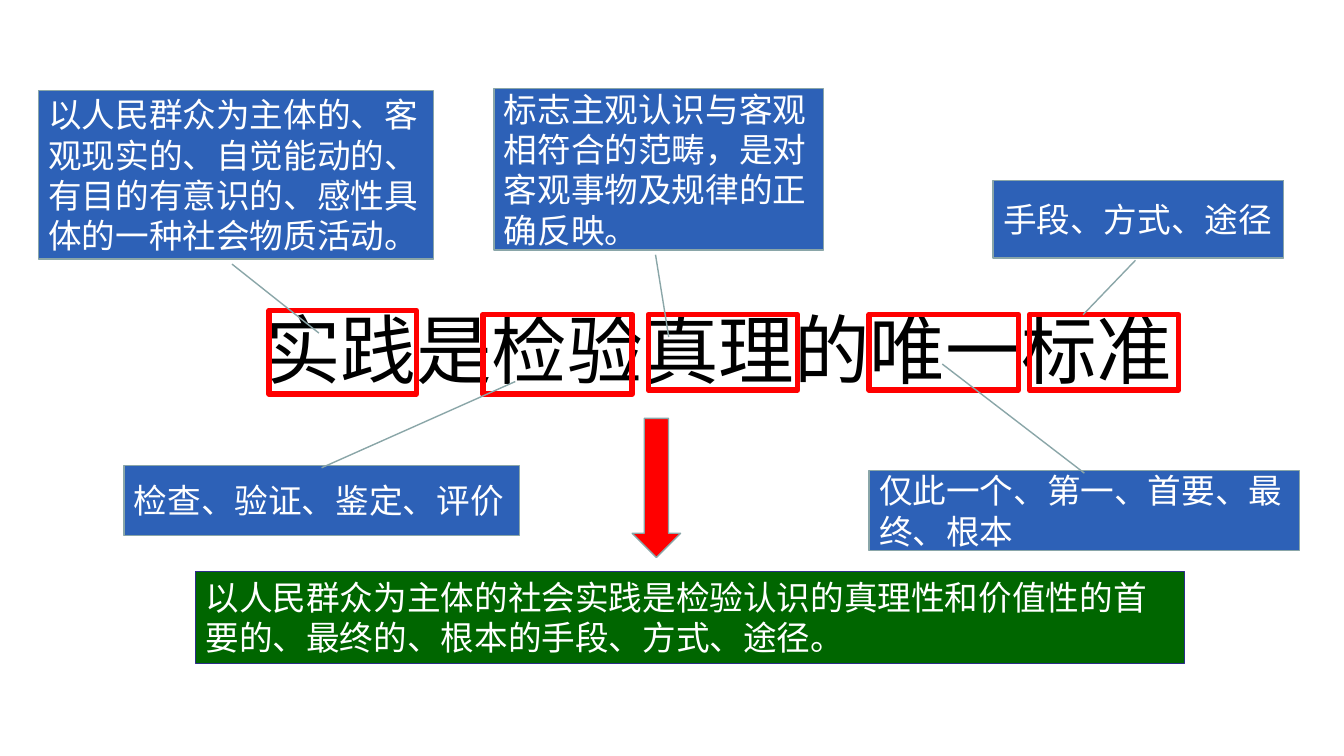
from lxml.etree import SubElement
from pptx import Presentation
from pptx.dml.color import RGBColor
from pptx.enum.shapes import MSO_SHAPE
from pptx.enum.text import MSO_ANCHOR, MSO_AUTO_SIZE, PP_ALIGN
from pptx.oxml.ns import qn
from pptx.util import Pt

# Content: lengths in px, 100 to the inch
PX = 9144
FONT = "Noto Sans CJK SC"
BLACK = RGBColor(0, 0, 0)
WHITE = RGBColor(255, 255, 255)
RED = RGBColor(255, 0, 0)
BLUE = RGBColor(0x2D, 0x61, 0xB7)
GREEN = RGBColor(0, 0x66, 0)
GRAY = RGBColor(0x8A, 0xA6, 0xA8)
NAVY = RGBColor(0x2D, 0x2D, 0x89)

TITLE = "实践是检验真理的唯一标准"
TITLE_BOX = (253, 296, 929, 101)

# Frames round the key words
FRAMES = [
    (267, 308, 146, 83),
    (479, 312, 148, 79),
    (643, 312, 148, 75),
    (862, 312, 148, 75),
    (1021, 312, 148, 75),
]

# Text, box, leader start and end as (down, across) shares of the box
ABOVE = (1.03, 0.49)
BELOW = (0.03, 0.5)
NOTES = [
    ("以人民群众为主体的、客观现实的、自觉能动的、有目的有意识的、感性具体的一种社会物质活动。",
     (38, 90, 392, 167), ABOVE, (1.44, 0.71)),
    ("检查、验证、鉴定、评价",
     (123, 462, 392, 69), BELOW, (-1.21, 0.99)),
    ("标志主观认识与客观相符合的范畴，是对客观事物及规律的正确反映。",
     (490, 88, 327, 160), ABOVE, (1.54, 0.53)),
    ("手段、方式、途径",
     (985, 179, 288, 77), ABOVE, (1.73, 0.31)),
    ("仅此一个、第一、首要、最终、根本",
     (862, 467, 427, 79), BELOW, (-1.34, 0.17)),
]

ARROW = (627, 415, 48, 138)
RESULT = "以人民群众为主体的社会实践是检验认识的真理性和价值性的首要的、最终的、根本的手段、方式、途径。"
RESULT_BOX = (194, 567, 981, 91)


def scale(box):
    return [n * PX for n in box]


def write(shape, text, size, color, wrap=True, anchor=MSO_ANCHOR.MIDDLE):
    frame = shape.text_frame
    frame.word_wrap = wrap
    frame.vertical_anchor = anchor
    frame.text = text
    para = frame.paragraphs[0]
    para.alignment = PP_ALIGN.LEFT
    para.font.size = Pt(size)
    para.font.color.rgb = color
    para.font.name = FONT
    # East Asian typeface
    props = para._p.pPr.find(qn("a:defRPr"))
    SubElement(props, qn("a:ea")).set("typeface", FONT)
    return frame


def draw(slide, kind, box, fill, line, width):
    shape = slide.shapes.add_shape(kind, *scale(box))
    shape.shadow.inherit = False
    if fill is None:
        shape.fill.background()
    else:
        shape.fill.solid()
        shape.fill.fore_color.rgb = fill
    shape.line.color.rgb = line
    shape.line.width = Pt(width)
    return shape


def main():
    deck = Presentation()
    deck.slide_width, deck.slide_height = scale((1333, 750))
    slide = deck.slides.add_slide(deck.slide_layouts[6])

    # Headline and its frames
    title = slide.shapes.add_textbox(*scale(TITLE_BOX))
    frame = write(title, TITLE, 54, BLACK, False, MSO_ANCHOR.TOP)
    frame.auto_size = MSO_AUTO_SIZE.SHAPE_TO_FIT_TEXT
    for box in FRAMES:
        draw(slide, MSO_SHAPE.RECTANGLE, box, None, RED, 4)

    # Callouts with leaders
    for text, box, start, end in NOTES:
        note = draw(slide, MSO_SHAPE.LINE_CALLOUT_1, box, BLUE, GRAY, 1)
        for i, share in enumerate(start + end):
            note.adjustments[i] = share
        write(note, text, 24, WHITE)

    # Arrow down to the conclusion
    draw(slide, MSO_SHAPE.DOWN_ARROW, ARROW, RED, GRAY, 1)
    result = draw(slide, MSO_SHAPE.RECTANGLE, RESULT_BOX, GREEN, NAVY, 0.5)
    frame = write(result, RESULT, 24, WHITE, anchor=MSO_ANCHOR.TOP)
    frame.auto_size = MSO_AUTO_SIZE.SHAPE_TO_FIT_TEXT

    deck.save("out.pptx")


if __name__ == "__main__":
    main()
